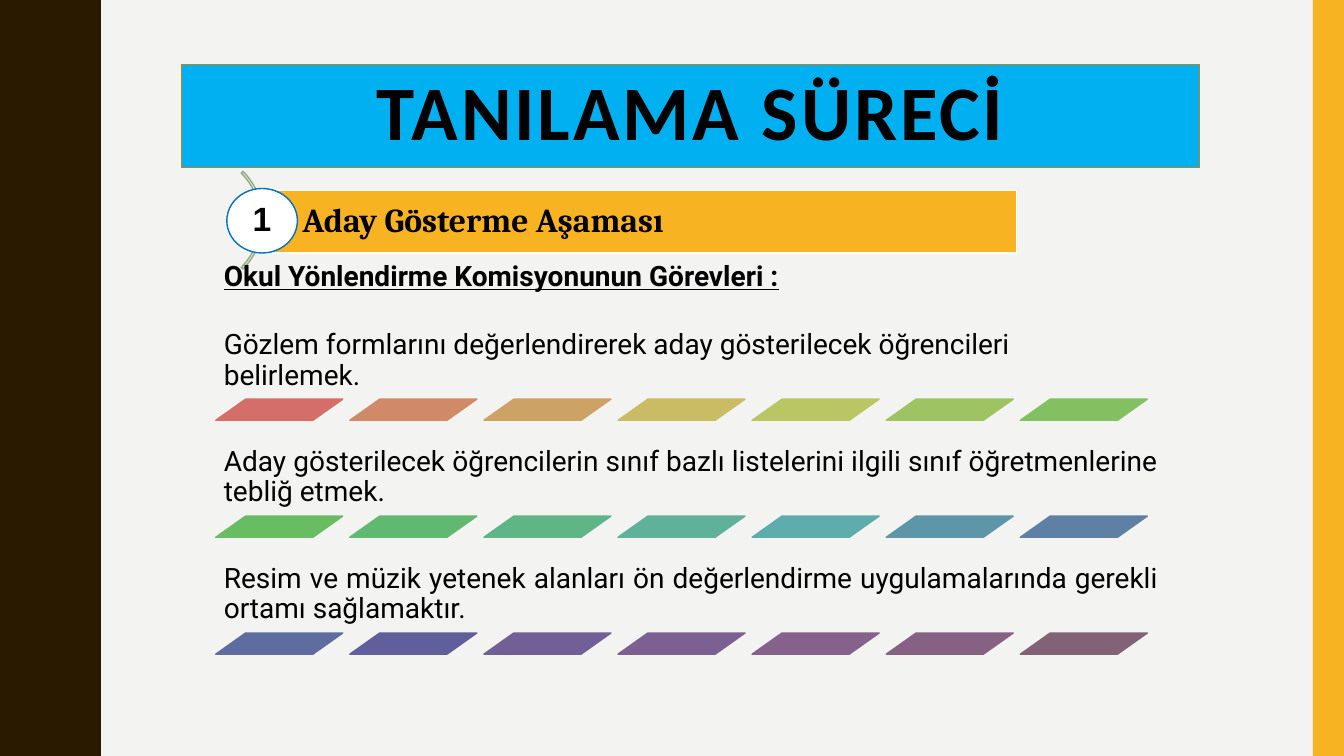
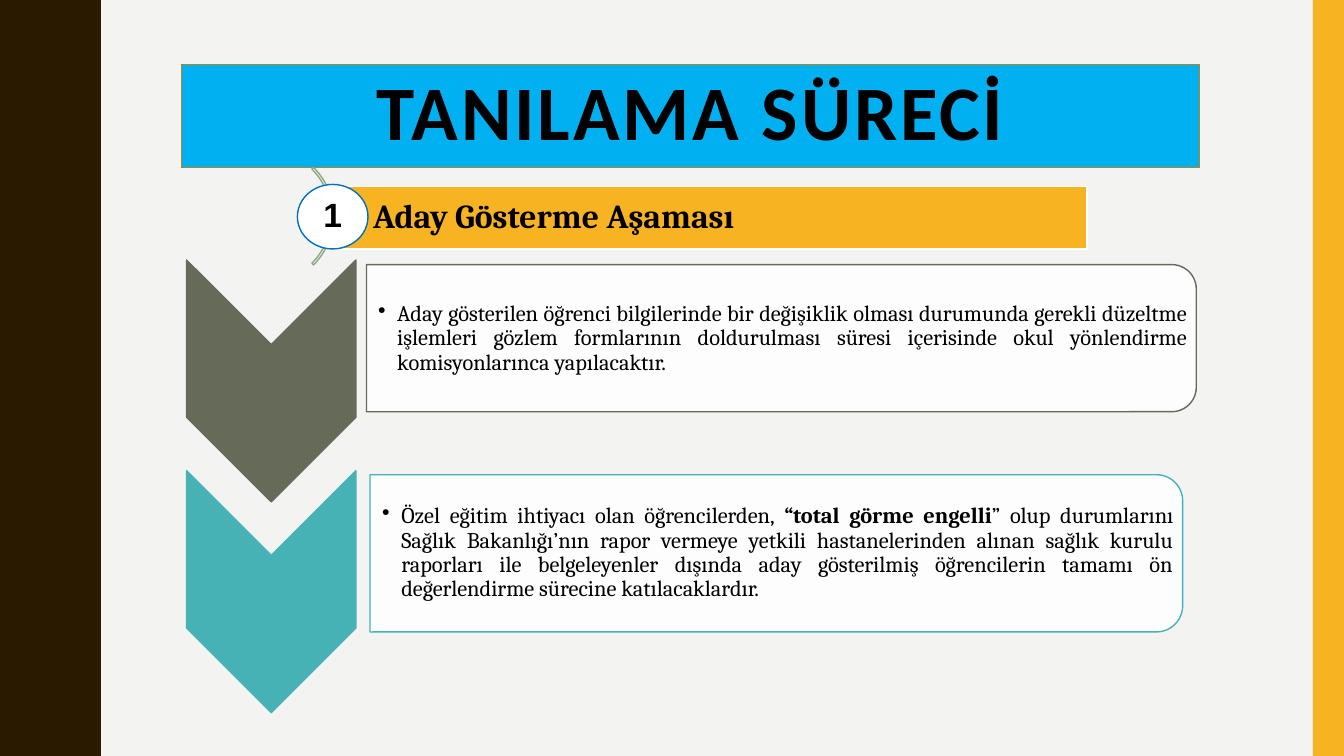
"""Build two slides on the nomination stage of the identification process."""
import math

from lxml import etree
from pptx import Presentation
from pptx import util as u
from pptx.dml.color import RGBColor
from pptx.enum import shapes, text
from pptx.oxml.ns import qn

COLORS = {
    "background": "F3F3F2", "wave": "2A1A00", "amber": "F8B323",
    "title": "00B0F0", "title_line": "B7841A", "text": "000000",
    "white": "FFFFFF", "arc": "8CAA7E", "circle_line": "0070C0",
    "olive": "656A59", "teal": "46B2B5",
}
SHAPE = shapes.MSO_SHAPE
ALIGN = text.PP_ALIGN
ANCHOR = text.MSO_ANCHOR


def add_shape(slide, kind, box, fill=None, line=None):
    shape = slide.shapes.add_shape(kind, *map(u.Inches, box))
    shape.shadow.inherit = False
    if fill:
        shape.fill.solid()
        shape.fill.fore_color.rgb = RGBColor.from_string(fill)
    else:
        shape.fill.background()
    if line:
        shape.line.color.rgb = RGBColor.from_string(line)
        shape.line.width = u.Pt(1)
    else:
        shape.line.fill.background()
    return shape


def write(shape, paragraphs, size, font, align, anchor, insets, bold=None):
    frame = shape.text_frame
    frame.word_wrap = True
    frame.auto_size = text.MSO_AUTO_SIZE.NONE
    frame.vertical_anchor = anchor
    frame.margin_left, frame.margin_top, frame.margin_right, frame.margin_bottom = map(u.Inches, insets)
    for index, content in enumerate(paragraphs):
        paragraph = frame.add_paragraph() if index else frame.paragraphs[0]
        paragraph.add_run().text = content
        paragraph.alignment = align
        paragraph.line_spacing = 0.9
        paragraph.font.size = u.Pt(size)
        paragraph.font.name = font
        paragraph.font.bold = bold
        paragraph.font.color.rgb = RGBColor.from_string(COLORS["text"])
    return frame.paragraphs


presentation = Presentation()
presentation.slide_width = u.Inches(13.33)
presentation.slide_height = u.Inches(7.5)
layout = presentation.slide_layouts[5]
layout.background.fill.solid()
layout.background.fill.fore_color.rgb = RGBColor.from_string(COLORS["background"])
duties_slide = presentation.slides.add_slide(layout)
rules_slide = presentation.slides.add_slide(layout)

edge = [(0.875 - 0.095 * math.cos(2 * math.pi * step / 30), step * 0.05) for step in range(151)]
builder = duties_slide.shapes.build_freeform(0, 0, scale=u.Inches(1))
builder.add_line_segments(edge + [(0, 7.5)], close=True)
wave = builder.convert_to_shape()
wave.shadow.inherit = False
wave.fill.solid()
wave.fill.fore_color.rgb = RGBColor.from_string(COLORS["wave"])
wave.line.fill.background()
band = add_shape(duties_slide, SHAPE.RECTANGLE, (13.02, 0, 0.31, 7.5), COLORS["amber"])
for decoration in (wave, band):
    layout.shapes.element.append(decoration.element)

for slide, left, top in ((duties_slide, 1.24, 1.5), (rules_slide, 1.94, 1.46)):
    title = slide.shapes.title
    title.left, title.top, title.width, title.height = map(u.Inches, (1.8, 0.64, 10.1, 1.02))
    title.fill.solid()
    title.fill.fore_color.rgb = RGBColor.from_string(COLORS["title"])
    title.line.color.rgb = RGBColor.from_string(COLORS["title_line"])
    title.line.width = u.Pt(1)
    heading = write(title, ["TANILAMA SÜRECİ"], 55, "Calibri", ALIGN.CENTER,
                    ANCHOR.MIDDLE, (0.1, 0.05, 0.1, 0.05), True)[0]
    heading.runs[0]._r.get_or_add_rPr().set("spc", "200")

    arc = add_shape(slide, SHAPE.BLOCK_ARC, (left, top, 1.37, 1.37), line=COLORS["arc"])
    for index, value in enumerate((189, 27, 0.017)):
        arc.adjustments[index] = value
    bar = add_shape(slide, SHAPE.RECTANGLE, (left + 1.36, top + 0.39, 7.48, 0.62),
                    COLORS["amber"], COLORS["white"])
    write(bar, ["Aday Gösterme Aşaması"], 24, "Cambria", ALIGN.LEFT,
          ANCHOR.MIDDLE, (0.4, 0.07, 0.07, 0.07), True)
    circle = add_shape(slide, SHAPE.OVAL, (left + 1.01, top + 0.37, 0.7, 0.64),
                       COLORS["white"], COLORS["circle_line"])
    write(circle, ["1"], 24, "Arial", ALIGN.CENTER, ANCHOR.MIDDLE, (0, 0, 0, 0), True)

duties = [
    (["Okul Yönlendirme Komisyonunun Görevleri :",
      "Gözlem formlarını değerlendirerek aday gösterilecek öğrencileri belirlemek."],
     9.26, 1.4, ALIGN.LEFT, "D36F68 D08A67 CDA365 CABC64 BAC663 9DC362 82C061"),
    (["Aday gösterilecek öğrencilerin sınıf bazlı listelerini ilgili sınıf öğretmenlerine tebliğ etmek."],
     9.43, 0.86, ALIGN.JUSTIFY, "68BC61 60B871 5FB586 5FB19A 5EADAC 5E96A9 5E80A5"),
    (["Resim ve müzik yetenek alanları ön değerlendirme uygulamalarında gerekli ortamı sağlamaktır."],
     9.43, 0.86, ALIGN.JUSTIFY, "5E6CA0 615F9B 715F96 7C6091 85618C 876183 826276"),
]
for row, (sentences, width, height, align, palette) in enumerate(duties):
    base = 3.96 + row * 1.16
    box = duties_slide.shapes.add_textbox(*map(u.Inches, (2.14, base - height, width, height)))
    paragraphs = write(box, sentences, 20, "Roboto", align, ANCHOR.BOTTOM, (0.08,) * 4)
    if len(sentences) > 1:
        paragraphs[0].font.bold = True
        paragraphs[0].font.underline = True
        paragraphs[0].space_after = u.Pt(27)
    for column, color in enumerate(palette.split()):
        tile = add_shape(duties_slide, SHAPE.PARALLELOGRAM,
                         (2.14 + column * 1.33, base, 1.26, 0.21), color, color)
        tile.adjustments[0] = 1.41

rules = [
    ("olive", 2.94, (7.02, -0.76, 1.46, 8.23), (3.63, 2.7, 8.16, 1.32),
     [("Aday gösterilen öğrenci bilgilerinde bir değişiklik olması durumunda gerekli düzeltme işlemleri "
       "gözlem formlarının doldurulması süresi içerisinde okul yönlendirme komisyonlarınca yapılacaktır.", False)]),
    ("teal", 5.03, (6.92, 1.46, 1.56, 8.06), (3.67, 4.78, 7.98, 1.41),
     [("Özel eğitim ihtiyacı olan öğrencilerden, ", False),
      ("“total görme engelli", True),
      ("” olup durumlarını Sağlık Bakanlığı’nın rapor vermeye yetkili hastanelerinden alınan sağlık kurulu "
       "raporları ile belgeleyenler dışında aday gösterilmiş öğrencilerin tamamı ön değerlendirme sürecine "
       "katılacaklardır.", False)]),
]
for name, chevron_top, card_box, text_box, parts in rules:
    color = COLORS[name]
    chevron = add_shape(rules_slide, SHAPE.CHEVRON, (1.49, chevron_top, 2.4, 1.68), color, color)
    card = add_shape(rules_slide, SHAPE.ROUND_2_SAME_RECTANGLE, card_box, COLORS["white"], color)
    chevron.rotation = card.rotation = 90
    white = card.element.spPr.find(qn("a:solidFill")).find(qn("a:srgbClr"))
    etree.SubElement(white, qn("a:alpha"), val="90000")
    box = rules_slide.shapes.add_textbox(*map(u.Inches, text_box))
    paragraph = write(box, [parts[0][0]], 16, "Cambria", ALIGN.JUSTIFY,
                      ANCHOR.MIDDLE, (0.12, 0.01, 0.01, 0.01))[0]
    for content, bold in parts[1:]:
        run = paragraph.add_run()
        run.text = content
        run.font.bold = bold
    properties = paragraph._p.get_or_add_pPr()
    properties.set("marL", str(u.Inches(0.19)))
    properties.set("indent", str(u.Inches(-0.19)))
    bullet = etree.Element(qn("a:buChar"), char="•")
    properties.find(qn("a:defRPr")).addprevious(bullet)

presentation.save("out.pptx")
